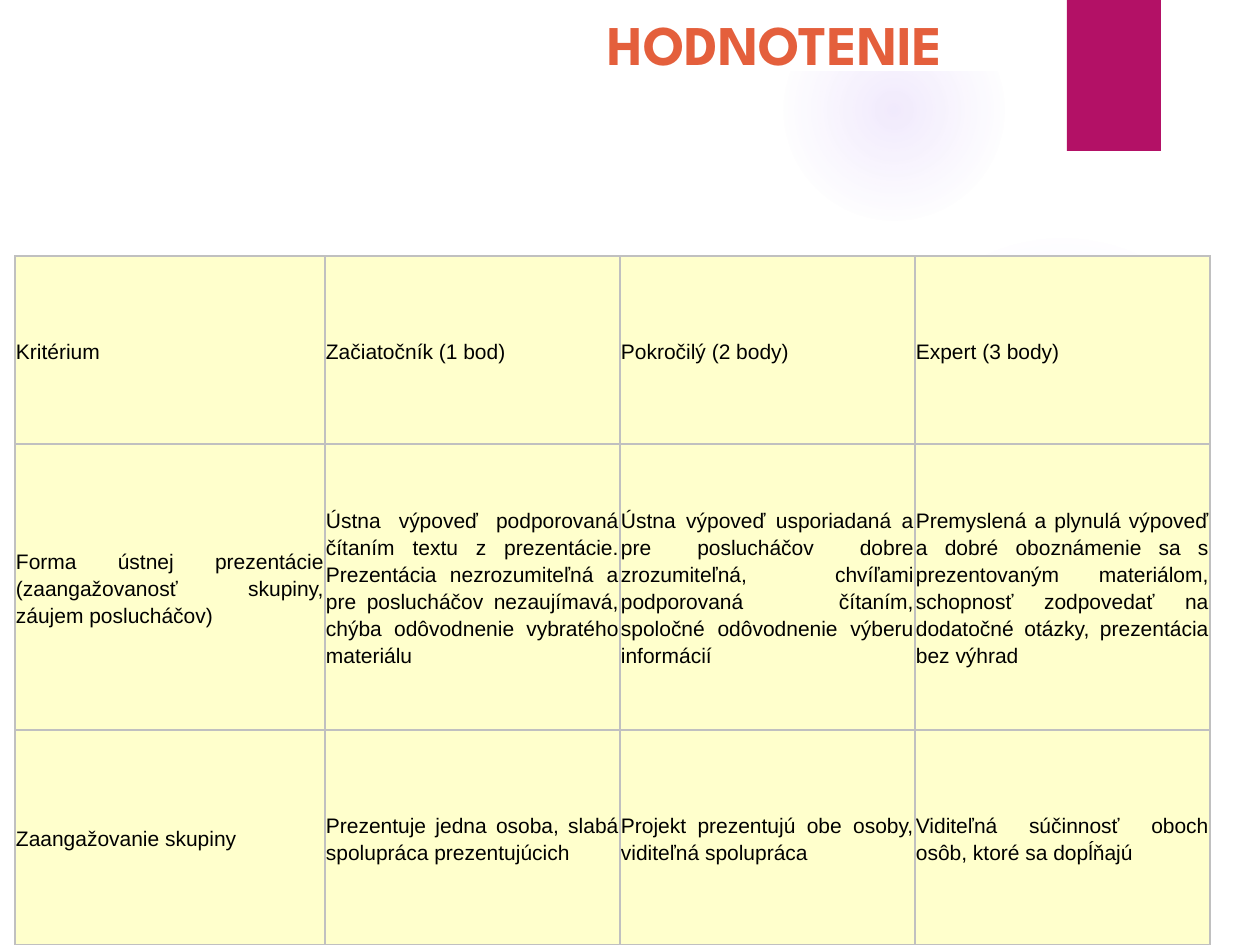
import pptx
import pptx.util
import pptx.dml.color
import pptx.enum.shapes
import pptx.enum.text
import pptx.oxml
import pptx.oxml.ns

PX = 914400 / 126
WHITE = pptx.dml.color.RGBColor(0xFF, 0xFF, 0xFF)
MAGENTA = pptx.dml.color.RGBColor(0xB3, 0x11, 0x66)
ORANGE = pptx.dml.color.RGBColor(0xE4, 0x5F, 0x3C)
CREAM = pptx.dml.color.RGBColor(0xFF, 0xFF, 0xCC)
BLACK = pptx.dml.color.RGBColor(0x00, 0x00, 0x00)
GLOW_HEX = "9B6BF2"
GRID_HEX = "C0C0C0"
NS = pptx.oxml.ns.nsdecls("a")


def px(*lengths):
    return [pptx.util.Emu(round(length * PX)) for length in lengths]


def apply(target, values):
    for name, value in values.items():
        setattr(target, name, value)


deck = pptx.Presentation()
deck.slide_width, deck.slide_height = px(1260, 945)
slide = deck.slides.add_slide(deck.slide_layouts[6])
shapes = slide.shapes

glows = [
    ((868, 231, 388, 388), [(0, 7), (36, 6), (69, 0)]),
    ((784, 0, 220, 220), [(0, 14), (36, 7), (73, 0)]),
]
for place, stops in glows:
    glow = shapes.add_shape(pptx.enum.shapes.MSO_SHAPE.OVAL, *px(*place))
    glow.shadow.inherit = False
    glow.line.fill.background()
    glow.fill.background()
    stop_xml = "".join(
        f'<a:gs pos="{position * 1000}"><a:srgbClr val="{GLOW_HEX}">'
        f'<a:alpha val="{opacity * 1000}"/></a:srgbClr></a:gs>'
        for position, opacity in stops
    )
    gradient = pptx.oxml.parse_xml(
        f'<a:gradFill {NS} rotWithShape="1"><a:gsLst>{stop_xml}</a:gsLst><a:path path="circle">'
        '<a:fillToRect l="50000" t="50000" r="50000" b="50000"/></a:path></a:gradFill>'
    )
    properties = glow._element.spPr
    properties.replace(properties.find(pptx.oxml.ns.qn("a:noFill")), gradient)

outline = shapes.build_freeform(0, 0, scale=PX)
outline.add_line_segments([(0, 945), (1260, 945), (1260, 0)])
outline.move_to(1191, 876)
outline.add_line_segments([(71, 876), (71, 71), (1191, 71)])
frame = outline.convert_to_shape()
ribbon = shapes.add_shape(pptx.enum.shapes.MSO_SHAPE.RECTANGLE, *px(1067, 0, 94, 151))
for panel, color in ((frame, WHITE), (ribbon, MAGENTA)):
    panel.shadow.inherit = False
    panel.fill.solid()
    panel.fill.fore_color.rgb = color
    panel.line.fill.background()

heading = shapes.add_textbox(*px(595, 5, 665, 77)).text_frame
apply(heading, {"word_wrap": True, "vertical_anchor": pptx.enum.text.MSO_ANCHOR.MIDDLE})
heading.text = "HODNOTENIE"
heading_font = heading.paragraphs[0].runs[0].font
apply(heading_font, {"name": "League Spartan", "size": pptx.util.Pt(32), "bold": True})
heading_font.color.rgb = ORANGE

criteria = [
    ["Kritérium", "Začiatočník (1 bod)", "Pokročilý (2 body)", "Expert (3 body)"],
    [
        "Forma ústnej prezentácie (zaangažovanosť skupiny, záujem poslucháčov)",
        "Ústna výpoveď podporovaná čítaním textu z prezentácie. Prezentácia nezrozumiteľná "
        "a pre poslucháčov nezaujímavá, chýba odôvodnenie vybratého materiálu",
        "Ústna výpoveď usporiadaná a pre poslucháčov dobre zrozumiteľná, chvíľami "
        "podporovaná čítaním, spoločné odôvodnenie výberu informácií",
        "Premyslená a plynulá výpoveď a dobré oboznámenie sa s prezentovaným materiálom, "
        "schopnosť zodpovedať na dodatočné otázky, prezentácia bez výhrad",
    ],
    [
        "Zaangažovanie skupiny",
        "Prezentuje jedna osoba, slabá spolupráca prezentujúcich",
        "Projekt prezentujú obe osoby, viditeľná spolupráca",
        "Viditeľná súčinnosť oboch osôb, ktoré sa dopĺňajú",
    ],
]
column_widths = px(310, 295, 295, 295)
row_heights = px(188, 286, 215)
rubric = shapes.add_table(3, 4, *px(15, 256, 1195, 689)).table
for column, width in zip(rubric.columns, column_widths):
    column.width = width
for row, height in zip(rubric.rows, row_heights):
    row.height = height

inset = px(1)[0]
cell_format = {
    "margin_left": inset,
    "margin_right": inset,
    "margin_top": inset,
    "margin_bottom": inset,
    "vertical_anchor": pptx.enum.text.MSO_ANCHOR.MIDDLE,
}
paragraph_format = {
    "alignment": pptx.enum.text.PP_ALIGN.JUSTIFY,
    "line_spacing": 1.15,
    "space_after": pptx.util.Pt(10),
}
for row, wording in zip(rubric.rows, criteria):
    for cell, text in zip(row.cells, wording):
        cell.text = text
        apply(cell, cell_format)
        cell.fill.solid()
        cell.fill.fore_color.rgb = CREAM
        paragraph = cell.text_frame.paragraphs[0]
        apply(paragraph, paragraph_format)
        font = paragraph.runs[0].font
        apply(font, {"name": "Arial", "size": pptx.util.Pt(12)})
        font.color.rgb = BLACK
        for index, side in enumerate(("lnL", "lnR", "lnT", "lnB")):
            border = pptx.oxml.parse_xml(
                f'<a:{side} {NS} w="12700"><a:solidFill><a:srgbClr val="{GRID_HEX}"/>'
                f"</a:solidFill></a:{side}>"
            )
            cell._tc.get_or_add_tcPr().insert(index, border)

deck.save("out.pptx")
